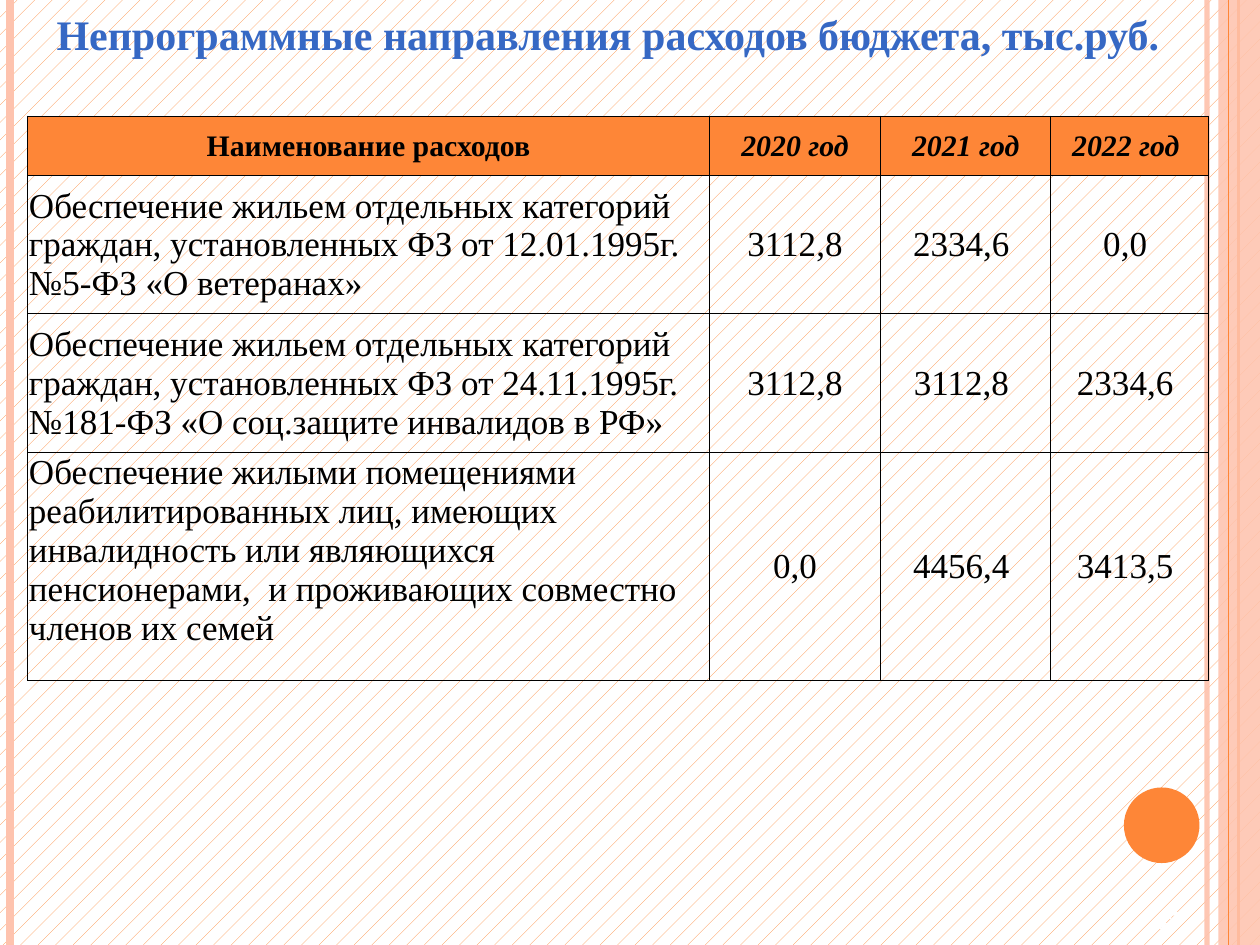
from lxml.etree import SubElement
from pptx import Presentation
from pptx.dml.color import RGBColor
from pptx.enum.dml import MSO_PATTERN
from pptx.enum.shapes import MSO_CONNECTOR, MSO_SHAPE
from pptx.enum.text import MSO_ANCHOR, PP_ALIGN
from pptx.oxml.ns import qn
from pptx.util import Inches, Pt

ORANGE = RGBColor(0xFE, 0x86, 0x37)
PEACH = RGBColor(0xFE, 0xC3, 0xAE)
BLUE = RGBColor(0x36, 0x68, 0xC4)
BLACK = RGBColor(0, 0, 0)
WHITE = RGBColor(0xFF, 0xFF, 0xFF)
SERIF = "Times New Roman"
NUMBER_FONT = "TeX Gyre Schola"

HEADER = ["Наименование расходов", "2020 год", "2021 год", "2022 год "]
EXPENSES = [
    ["Обеспечение жильем отдельных категорий граждан, установленных ФЗ "
     "от 12.01.1995г. №5-ФЗ «О ветеранах»", "3112,8", "2334,6", "0,0"],
    ["Обеспечение жильем отдельных категорий граждан, установленных ФЗ "
     "от 24.11.1995г. №181-ФЗ «О соц.защите инвалидов в РФ»",
     "3112,8", "3112,8", "2334,6"],
    ["Обеспечение жилыми помещениями реабилитированных лиц, имеющих "
     "инвалидность или являющихся пенсионерами,  и проживающих совместно "
     "членов их семей", "0,0", "4456,4", "3413,5"],
]
COL_WIDTHS = [5.41, 1.36, 1.35, 1.25]
ROW_HEIGHTS = [0.47, 1.1, 1.1, 1.81]


def set_alpha(parent, percent):
    """Make the solid fill inside parent partly transparent."""
    color = parent.find(qn("a:solidFill"))[0]
    SubElement(color, qn("a:alpha"), val=str(percent * 1000))


class SlideBuilder:
    def __init__(self, slide, font=SERIF):
        self.s = slide
        self.font = font

    def background(self):
        fill = self.s.background.fill
        fill.patterned()
        fill.pattern = MSO_PATTERN.PERCENT_5
        fill.fore_color.rgb = ORANGE
        fill.back_color.rgb = WHITE

    def vertical_line(self, x, color, width, alpha=None):
        line = self.s.shapes.add_connector(
            MSO_CONNECTOR.STRAIGHT, Inches(x), 0, Inches(x), Inches(7.5))
        line.line.color.rgb = color
        line.line.width = Pt(width)
        sp_pr = line._element.spPr
        if alpha:
            set_alpha(sp_pr.find(qn("a:ln")), alpha)
        SubElement(sp_pr, qn("a:effectLst"))

    def shape(self, kind, box, color, alpha=None):
        sp = self.s.shapes.add_shape(kind, *map(Inches, box))
        sp.shadow.inherit = False
        sp.fill.solid()
        sp.fill.fore_color.rgb = color
        sp.line.fill.background()
        if alpha:
            set_alpha(sp._element.spPr, alpha)

    def run(self, tf, text, size, color, bold=False, italic=False,
            align=PP_ALIGN.LEFT, font=None):
        p = tf.paragraphs[0]
        p.alignment = align
        r = p.add_run()
        r.text = text
        r.font.name = font or self.font
        r.font.size = Pt(size)
        r.font.color.rgb = color
        r.font.bold = bold
        r.font.italic = italic

    def text(self, box, text, size, color, anchor=MSO_ANCHOR.TOP, **style):
        tf = self.s.shapes.add_textbox(*map(Inches, box)).text_frame
        tf.word_wrap = True
        tf.vertical_anchor = anchor
        self.run(tf, text, size, color, bold=True, **style)

    def borders(self, cell, **widths):
        tc_pr = cell._tc.get_or_add_tcPr()
        for side, width in widths.items():
            ln = SubElement(tc_pr, qn(f"a:ln{side}"), w=str(Pt(width)))
            fill = SubElement(ln, qn("a:solidFill"))
            SubElement(fill, qn("a:srgbClr"), val=str(BLACK))

    def table(self, x, y, rows, col_widths, row_heights):
        table = self.s.shapes.add_table(
            len(rows), len(col_widths), Inches(x), Inches(y),
            Inches(sum(col_widths)), Inches(sum(row_heights))).table
        for col, width in zip(table.columns, col_widths):
            col.width = Inches(width)
        for row, height in zip(table.rows, row_heights):
            row.height = Inches(height)
        for i, row in enumerate(rows):
            for j, text in enumerate(row):
                self.cell(table.cell(i, j), text, i, j,
                          last_col=j == len(row) - 1)

    def cell(self, cell, text, i, j, last_col):
        header = i == 0
        cell.margin_left = cell.margin_top = Inches(0.01)
        cell.margin_right = Inches(0.08 if i and j > 1 else 0.01)
        cell.margin_bottom = 0
        top_aligned = i == 3 and j == 0
        cell.vertical_anchor = MSO_ANCHOR.TOP if top_aligned else MSO_ANCHOR.MIDDLE
        self.borders(cell, L=0.5, R=1 if last_col else 0.5,
                     T=1 if i == 3 else 0.5, B=1 if i >= 2 else 0.5)
        if header:
            cell.fill.solid()
            cell.fill.fore_color.rgb = ORANGE
        else:
            cell.fill.background()
        self.run(cell.text_frame, text, 17 if header else 20, BLACK,
                 bold=header, italic=header and j > 0,
                 align=PP_ALIGN.CENTER if header or j else PP_ALIGN.LEFT)


def main():
    prs = Presentation()
    prs.slide_width, prs.slide_height = Inches(10), Inches(7.5)
    b = SlideBuilder(prs.slides.add_slide(prs.slide_layouts[6]))

    b.background()
    b.vertical_line(9.58, PEACH, 3, alpha=93)
    b.vertical_line(0.08, PEACH, 4.5)
    b.vertical_line(9.83, ORANGE, 1.5)
    b.shape(MSO_SHAPE.RECTANGLE, (9.67, 0, 0.33, 7.5), PEACH, alpha=87)
    b.vertical_line(9.75, ORANGE, 0.75)
    b.shape(MSO_SHAPE.OVAL, (8.92, 6.25, 0.6, 0.6), ORANGE)

    b.text((0.35, 0.02, 9.21, 0.51),
           "Непрограммные направления расходов бюджета, тыс.руб.", 24, BLUE)
    b.table(0.22, 0.92, [HEADER, *EXPENSES], COL_WIDTHS, ROW_HEIGHTS)
    b.text((8.86, 7.1, 0.83, 0.4), "47", 14, WHITE, MSO_ANCHOR.MIDDLE,
           align=PP_ALIGN.CENTER, font=NUMBER_FONT)

    prs.save("out.pptx")


if __name__ == "__main__":
    main()
